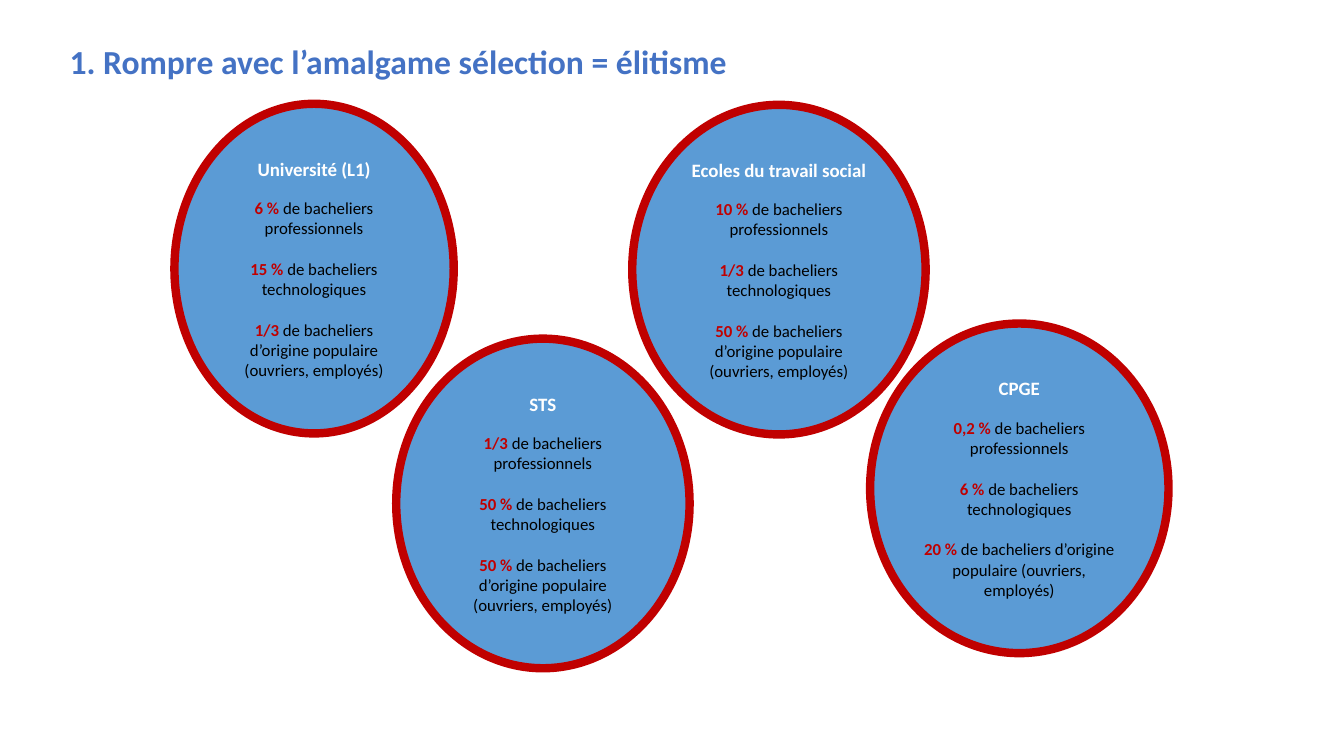
from pptx import Presentation
from pptx.dml.color import RGBColor
from pptx.enum.shapes import MSO_SHAPE as Shape
from pptx.enum.text import MSO_ANCHOR as Anchor, MSO_AUTO_SIZE as AutoSize, PP_ALIGN as Align
from pptx.util import Inches, Pt

WIDTH, HEIGHT = Inches(13.33), Inches(7.5)
COLUMN, ROW = WIDTH / 100, HEIGHT / 100  # grid of 100 columns by 100 rows
COLORS = {"title": "4472C4", "disc": "5B9BD5", "accent": "C00000",
          "heading": "FFFFFF", "body": "000000"}
FONT = "Calibri"

GROUPS = ["de bacheliers professionnels",
          "de bacheliers technologiques",
          "de bacheliers d’origine populaire (ouvriers, employés)"]
DISC_ROWS = 43.6

# Name, (column, row, columns wide), share of each group
PATHWAYS = [
    ("Université (L1)", (12.98, 13.73, 20.78), ["6 %", "15 %", "1/3"]),
    ("STS", (29.48, 44.8, 21.83), ["1/3", "50 %", "50 %"]),
    ("Ecoles du travail social", (47.04, 13.87, 21.83), ["10 %", "1/3", "50 %"]),
    ("CPGE", (64.74, 42.8, 22.2), ["0,2 %", "6 %", "20 %"]),
]


def color(name):
    return RGBColor.from_string(COLORS[name])


def grid_box(column, row, columns, rows):
    return (round(column * COLUMN), round(row * ROW),
            round(columns * COLUMN), round(rows * ROW))


def add_text(paragraph, text, size=12, fill="body", bold=False):
    run = paragraph.add_run()
    run.text = text
    run.font.name, run.font.size, run.font.bold = FONT, Pt(size), bold
    run.font.color.rgb = color(fill)


def set_title(slide, box):
    title = slide.shapes.title
    title.left, title.top, title.width, title.height = box
    frame = title.text_frame
    frame.word_wrap, frame.auto_size = True, AutoSize.NONE
    frame.vertical_anchor = Anchor.TOP
    heading = frame.paragraphs[0]
    heading.alignment = Align.LEFT
    add_text(heading, "1. Rompre avec l’amalgame sélection = élitisme",
             size=24, fill="title", bold=True)


def add_pathway(slide, box, name, shares):
    disc = slide.shapes.add_shape(Shape.OVAL, *box)
    disc.shadow.inherit = False
    disc.fill.solid()
    disc.fill.fore_color.rgb = color("disc")
    disc.line.color.rgb = color("accent")
    disc.line.width = Pt(6)

    # Heading, then one paragraph per group
    frame = disc.text_frame
    frame.word_wrap, frame.vertical_anchor = True, Anchor.MIDDLE
    heading = frame.paragraphs[0]
    heading.alignment = Align.CENTER
    add_text(heading, name, size=13.5, fill="heading", bold=True)
    for index, (share, group) in enumerate(zip(shares, GROUPS)):
        entry = frame.add_paragraph()
        entry.alignment = Align.CENTER
        entry.space_before = Pt(14.6 if index else 12.8)
        add_text(entry, share + " ", fill="accent", bold=True)
        add_text(entry, group)


def main():
    deck = Presentation()
    deck.slide_width, deck.slide_height = WIDTH, HEIGHT
    slide = deck.slides.add_slide(deck.slide_layouts[5])
    for name, place, shares in PATHWAYS:
        add_pathway(slide, grid_box(*place, DISC_ROWS), name, shares)
    set_title(slide, grid_box(4.43, 4.8, 58.29, 6.67))
    deck.save("out.pptx")


if __name__ == "__main__":
    main()
